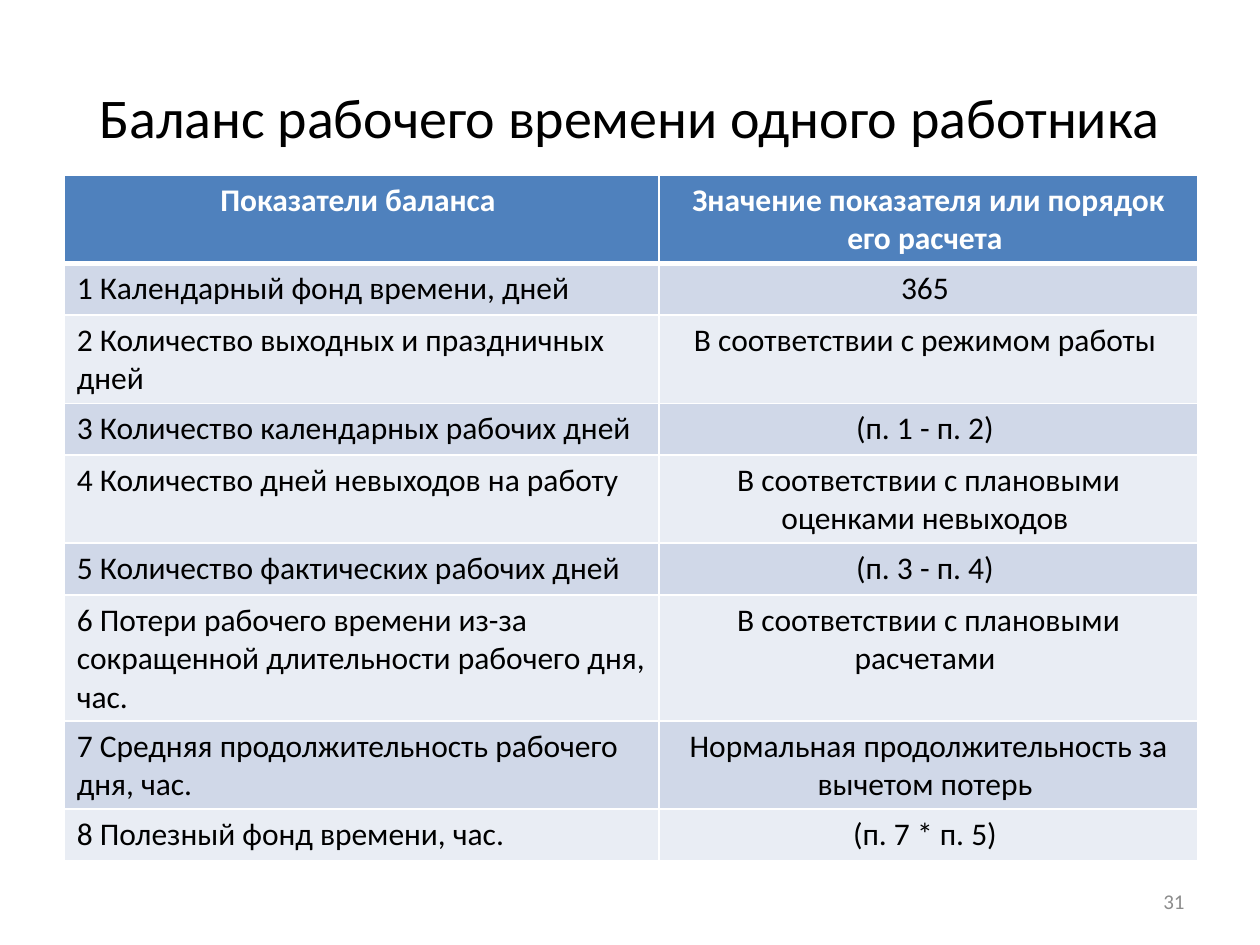
from dataclasses import dataclass

from lxml.etree import SubElement
from pptx import Presentation
from pptx.dml.color import RGBColor
from pptx.enum.text import MSO_ANCHOR, PP_ALIGN
from pptx.oxml.ns import qn
from pptx.util import Inches, Pt


@dataclass(frozen=True)
class Theme:
    font: str = "Calibri"
    title_size: int = 32
    table_size: int = 18
    number_size: int = 12
    text: str = "000000"
    number: str = "8C8C8C"
    header_text: str = "FFFFFF"
    header_fill: str = "4F81BD"
    band_fills: tuple = ("D0D8E8", "E9EDF4")
    border: str = "FFFFFF"
    border_width: int = 1
    header_rule_width: int = 3


THEME = Theme()
TITLE = "Баланс рабочего времени одного работника"
PAGE_NUMBER = "31"
COLUMN_WIDTHS = (4.72, 4.28)
ROW_HEIGHT = 0.41
BALANCE = (
    ("Показатели баланса ", "Значение показателя или порядок его расчета "),
    ("1 Календарный фонд времени, дней", "365 "),
    ("2 Количество выходных и праздничных дней",
     "В соответствии с режимом работы "),
    ("3 Количество календарных рабочих дней", "(п. 1 - п. 2) "),
    ("4 Количество дней невыходов на работу",
     "В соответствии с плановыми оценками невыходов "),
    ("5 Количество фактических рабочих дней", "(п. 3 - п. 4) "),
    ("6 Потери рабочего времени из-за сокращенной длительности рабочего дня, час.",
     "В соответствии с плановыми расчетами "),
    ("7 Средняя продолжительность рабочего дня, час.",
     "Нормальная продолжительность за вычетом потерь "),
    ("8 Полезный фонд времени, час.", "(п. 7 * п. 5) "),
)


def write_text(frame, text, size, color, align, bold=False):
    para = frame.paragraphs[0]
    para.alignment = align
    span = para.add_run()
    span.text = text
    formats = {"name": THEME.font, "size": Pt(size), "bold": bold}
    for name, value in formats.items():
        setattr(span.font, name, value)
    span.font.color.rgb = RGBColor.from_string(color)


def add_text(page, area, text, size, color, align):
    box = page.shapes.add_textbox(*map(Inches, area))
    frame = box.text_frame
    formats = {"word_wrap": True, "vertical_anchor": MSO_ANCHOR.MIDDLE}
    for name, value in formats.items():
        setattr(frame, name, value)
    write_text(frame, text, size, color, align)


def set_borders(cell, top, bottom):
    """Draw the cell's edges; call before the fill, which must follow them in XML."""
    properties = cell._tc.get_or_add_tcPr()
    side = THEME.border_width
    widths = {"a:lnL": side, "a:lnR": side, "a:lnT": top, "a:lnB": bottom}
    for tag, width in widths.items():
        line = SubElement(properties, qn(tag), w=str(Pt(width)))
        fill = SubElement(line, qn("a:solidFill"))
        SubElement(fill, qn("a:srgbClr"), val=THEME.border)


def fill_cell(cell, text, row, column):
    is_header = row == 0
    thin, thick = THEME.border_width, THEME.header_rule_width
    set_borders(cell, thick if row == 1 else thin, thick if is_header else thin)
    band = THEME.band_fills[(row - 1) % 2]
    cell.fill.solid()
    cell.fill.fore_color.rgb = RGBColor.from_string(
        THEME.header_fill if is_header else band)
    write_text(
        cell.text_frame, text, THEME.table_size,
        THEME.header_text if is_header else THEME.text,
        PP_ALIGN.CENTER if is_header or column == 1 else PP_ALIGN.LEFT,
        bold=is_header)


def add_balance_table(page, left, top):
    width, height = sum(COLUMN_WIDTHS), ROW_HEIGHT * len(BALANCE)
    table = page.shapes.add_table(
        len(BALANCE), len(COLUMN_WIDTHS),
        *map(Inches, (left, top, width, height))).table
    for column, column_width in zip(table.columns, COLUMN_WIDTHS):
        column.width = Inches(column_width)
    for row, texts in enumerate(BALANCE):
        table.rows[row].height = Inches(ROW_HEIGHT)
        for column, text in enumerate(texts):
            fill_cell(table.cell(row, column), text, row, column)


def main():
    deck = Presentation()
    deck.slide_width, deck.slide_height = Inches(10), Inches(7.5)
    page = deck.slides.add_slide(deck.slide_layouts[6])
    add_text(page, (0.5, 0.3, 9, 1.25), TITLE,
             THEME.title_size, THEME.text, PP_ALIGN.CENTER)
    add_balance_table(page, 0.51, 1.39)
    add_text(page, (7.17, 6.95, 2.33, 0.4), PAGE_NUMBER,
             THEME.number_size, THEME.number, PP_ALIGN.RIGHT)
    deck.save("out.pptx")


if __name__ == "__main__":
    main()
